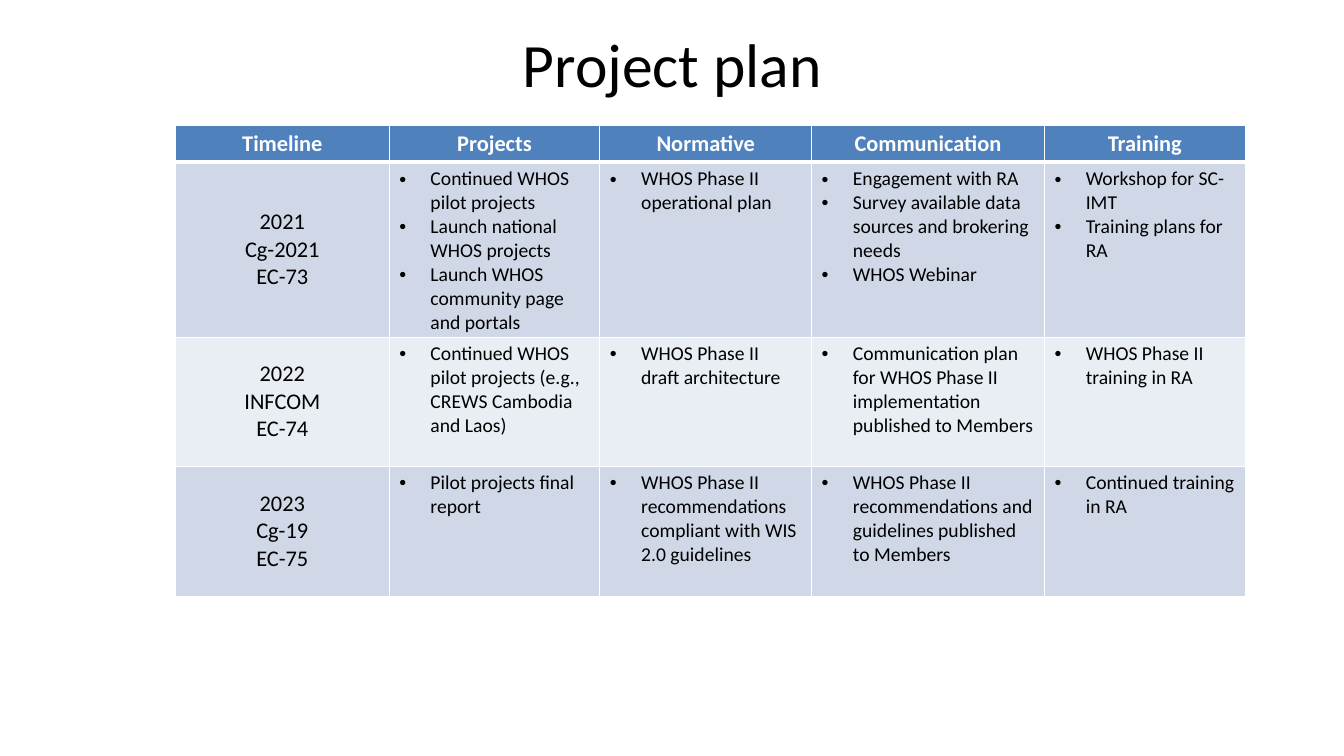
from lxml import etree
from pptx import Presentation, util as u
from pptx.dml.color import RGBColor
from pptx.enum import text
from pptx.oxml.ns import qn

BLACK = RGBColor(0x00, 0x00, 0x00)
WHITE = RGBColor(0xFF, 0xFF, 0xFF)
HEADER_BLUE = RGBColor(0x4F, 0x81, 0xBD)
BAND_DARK = RGBColor(0xD0, 0xD8, 0xE8)
BAND_LIGHT = RGBColor(0xE9, 0xED, 0xF4)

COLUMN_WIDTHS = [2.12, 2.09, 2.1, 2.31, 1.99]
ROW_HEIGHTS = [0.37, 1.73, 1.28, 1.29]
HEADINGS = ["Timeline", "Projects", "Normative", "Communication", "Training"]

# Each year: the timeline lines, then the bullets of the four work streams
PLAN = [
    [
        ["2021", "Cg-2021", "EC-73"],
        ["Continued WHOS pilot projects", "Launch national WHOS projects",
         "Launch WHOS community page and portals"],
        ["WHOS Phase II operational plan"],
        ["Engagement with RA",
         "Survey available data sources and brokering needs", "WHOS Webinar"],
        ["Workshop for SC-IMT", "Training plans for RA"],
    ],
    [
        ["2022", "INFCOM", "EC-74"],
        ["Continued WHOS pilot projects (e.g., CREWS Cambodia and Laos)"],
        ["WHOS Phase II draft architecture"],
        ["Communication plan for WHOS Phase II implementation published to Members"],
        ["WHOS Phase II training in RA"],
    ],
    [
        ["2023", "Cg-19", "EC-75"],
        ["Pilot projects final report"],
        ["WHOS Phase II recommendations compliant with WIS 2.0 guidelines"],
        ["WHOS Phase II recommendations and guidelines published to Members"],
        ["Continued training in RA"],
    ],
]


class PlanSlide:
    """Holds the style and the current slide."""

    font = "Calibri"
    indent = u.Inches(0.31)

    def __init__(self, slide):
        self.slide = slide

    def fill_text(self, frame, lines, size, color=BLACK, bold=False, bullets=False):
        frame.text = "\n".join(lines)
        for para in frame.paragraphs:
            if bullets:
                self.add_bullet(para)
            else:
                para.alignment = text.PP_ALIGN.CENTER
            for span in para.runs:
                span.font.name = self.font
                span.font.size = u.Pt(size)
                span.font.bold = bold
                span.font.color.rgb = color

    def add_bullet(self, para):
        props = para._p.get_or_add_pPr()
        props.set("marL", str(self.indent))
        props.set("indent", str(-self.indent))
        etree.SubElement(props, qn("a:buFont"), typeface="Arial")
        etree.SubElement(props, qn("a:buChar"), char="•")

    def add_title(self, title, left, top, width, height):
        box = self.slide.shapes.add_textbox(
            u.Inches(left), u.Inches(top), u.Inches(width), u.Inches(height))
        frame = box.text_frame
        frame.word_wrap = True
        frame.vertical_anchor = text.MSO_ANCHOR.MIDDLE
        self.fill_text(frame, [title], 44)

    def add_table(self, left, top, widths, heights):
        table = self.slide.shapes.add_table(
            len(heights), len(widths), u.Inches(left), u.Inches(top),
            u.Inches(sum(widths)), u.Inches(sum(heights))).table
        for column, width in zip(table.columns, widths):
            column.width = u.Inches(width)
        for row, height in zip(table.rows, heights):
            row.height = u.Inches(height)
        return table

    def style_cell(self, cell, fill, top_line=1, bottom_line=1):
        props = cell._tc.get_or_add_tcPr()
        edges = {"a:lnL": 1, "a:lnR": 1, "a:lnT": top_line, "a:lnB": bottom_line}
        for edge, points in edges.items():
            line = etree.SubElement(props, qn(edge), w=str(u.Pt(points)))
            paint = etree.SubElement(line, qn("a:solidFill"))
            etree.SubElement(paint, qn("a:srgbClr"), val=str(WHITE))
        cell.fill.solid()
        cell.fill.fore_color.rgb = fill


def main():
    deck = Presentation()
    deck.slide_width, deck.slide_height = u.Inches(13.33), u.Inches(7.5)
    page = PlanSlide(deck.slides.add_slide(deck.slide_layouts[6]))

    page.add_title("Project plan", 0.67, 0, 12, 1.25)
    table = page.add_table(1.74, 1.24, COLUMN_WIDTHS, ROW_HEIGHTS)

    # Header row
    for col, heading in enumerate(HEADINGS):
        cell = table.cell(0, col)
        page.style_cell(cell, HEADER_BLUE, bottom_line=3)
        page.fill_text(cell.text_frame, [heading], 16, WHITE, bold=True)

    # One banded row per year
    for row, year in enumerate(PLAN, start=1):
        band = BAND_DARK if row % 2 else BAND_LIGHT
        for col, lines in enumerate(year):
            cell = table.cell(row, col)
            page.style_cell(cell, band, top_line=3 if row == 1 else 1)
            if col == 0:
                cell.vertical_anchor = text.MSO_ANCHOR.MIDDLE
                page.fill_text(cell.text_frame, lines, 16)
            else:
                page.fill_text(cell.text_frame, lines, 14, bullets=True)

    deck.save("out.pptx")


if __name__ == "__main__":
    main()
